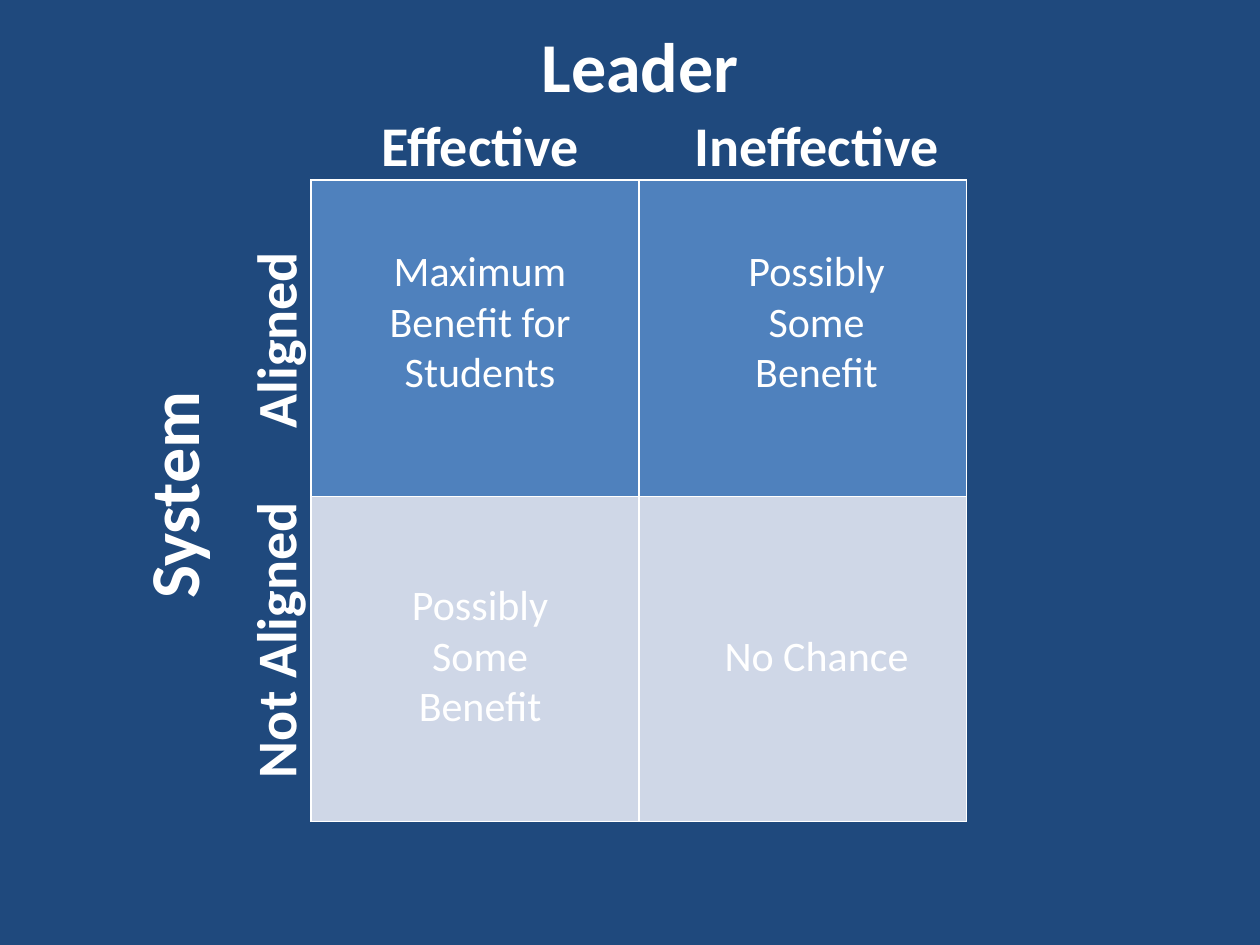
from dataclasses import dataclass

from lxml import etree
from pptx import Presentation
from pptx import util as u
from pptx.dml.color import RGBColor
from pptx.enum import text
from pptx.oxml import ns


@dataclass(frozen=True)
class Theme:
    font: str = "Calibri"
    back: str = "1F497D"
    ink: str = "FFFFFF"
    aligned: str = "4F81BD"
    unaligned: str = "CFD7E7"
    axis: int = 40
    heading: int = 32
    body: int = 24
    border: int = 1


THEME = Theme()
PAGE_WIDTH, PAGE_HEIGHT = 10, 7.5
GRID_LEFT, GRID_TOP = 2.47, 1.43
COLUMN_WIDTH = 2.6
ROW_HEIGHTS = (2.51, 2.58)
COLUMN_CENTRES = (3.81, 6.48)
ROW_CENTRES = (2.55, 5.2)
HEADING_Y, HEADING_X = 1.15, 2.18
TITLE_CENTRE = (5.08, 0.51)
SYSTEM_CENTRE = (1.36, 3.93)


def place(shape, centre, size):
    shape.left, shape.top = (u.Inches(c - s / 2) for c, s in zip(centre, size))
    shape.width, shape.height = (u.Inches(s) for s in size)


def write(shape, words, size, bold):
    frame = shape.text_frame
    frame.word_wrap = True
    frame.auto_size = text.MSO_AUTO_SIZE.NONE
    frame.vertical_anchor = text.MSO_ANCHOR.TOP
    para = frame.paragraphs[0]
    para.alignment = text.PP_ALIGN.CENTER
    span = para.add_run()
    span.text = words
    span.font.name = THEME.font
    span.font.size = u.Pt(size)
    span.font.bold = bold
    span.font.color.rgb = RGBColor.from_string(THEME.ink)


def add_label(page, words, centre, size, points, bold=True, rotation=0):
    box = page.shapes.add_textbox(0, 0, 0, 0)
    place(box, centre, size)
    box.rotation = rotation
    write(box, words, points, bold)


def add_title(page, words):
    title = page.shapes.title
    place(title, TITLE_CENTRE, (4.08, 0.77))
    write(title, words, THEME.axis, True)


def style_cell(cell, colour):
    properties = cell._tc.get_or_add_tcPr()
    for side in ("lnL", "lnR", "lnT", "lnB"):
        line = etree.SubElement(properties, ns.qn(f"a:{side}"), w=str(u.Pt(THEME.border)))
        fill = etree.SubElement(line, ns.qn("a:solidFill"))
        etree.SubElement(fill, ns.qn("a:srgbClr"), val=THEME.ink)
    cell.fill.solid()
    cell.fill.fore_color.rgb = RGBColor.from_string(colour)


def add_matrix(page):
    table = page.shapes.add_table(
        2, 2, u.Inches(GRID_LEFT), u.Inches(GRID_TOP),
        u.Inches(2 * COLUMN_WIDTH), u.Inches(sum(ROW_HEIGHTS)),
    ).table
    table.first_row = table.horz_banding = False
    for column in table.columns:
        column.width = u.Inches(COLUMN_WIDTH)
    for row, height, colour in zip(table.rows, ROW_HEIGHTS, (THEME.aligned, THEME.unaligned)):
        row.height = u.Inches(height)
        for cell in row.cells:
            style_cell(cell, colour)


def add_outcomes(page):
    outcomes = (
        (("Maximum Benefit for Students", 2.23, 1.31), ("Possibly Some Benefit", 1.78, 1.31)),
        (("Possibly Some Benefit", 1.78, 1.31), ("No Chance", 1.68, 0.51)),
    )
    for y, row in zip(ROW_CENTRES, outcomes):
        for x, (words, width, height) in zip(COLUMN_CENTRES, row):
            add_label(page, words, (x, y), (width, height), THEME.body, bold=False)


def add_headings(page):
    columns = (("Effective", 1.78), ("Ineffective", 2.16))
    for x, (words, width) in zip(COLUMN_CENTRES, columns):
        add_label(page, words, (x, HEADING_Y), (width, 0.64), THEME.heading)
    rows = (("Aligned", 1.61, 2.7), ("Not Aligned", 2.5, 5.08))
    for words, width, y in rows:
        add_label(page, words, (HEADING_X, y), (width, 0.64), THEME.heading, rotation=270)
    add_label(page, "System", SYSTEM_CENTRE, (1.87, 0.77), THEME.axis, rotation=270)


def main():
    deck = Presentation()
    deck.slide_width, deck.slide_height = u.Inches(PAGE_WIDTH), u.Inches(PAGE_HEIGHT)
    page = deck.slides.add_slide(deck.slide_layouts.get_by_name("Title Only"))
    page.background.fill.solid()
    page.background.fill.fore_color.rgb = RGBColor.from_string(THEME.back)
    add_title(page, "Leader")
    add_matrix(page)
    add_headings(page)
    add_outcomes(page)
    deck.save("out.pptx")


if __name__ == "__main__":
    main()
